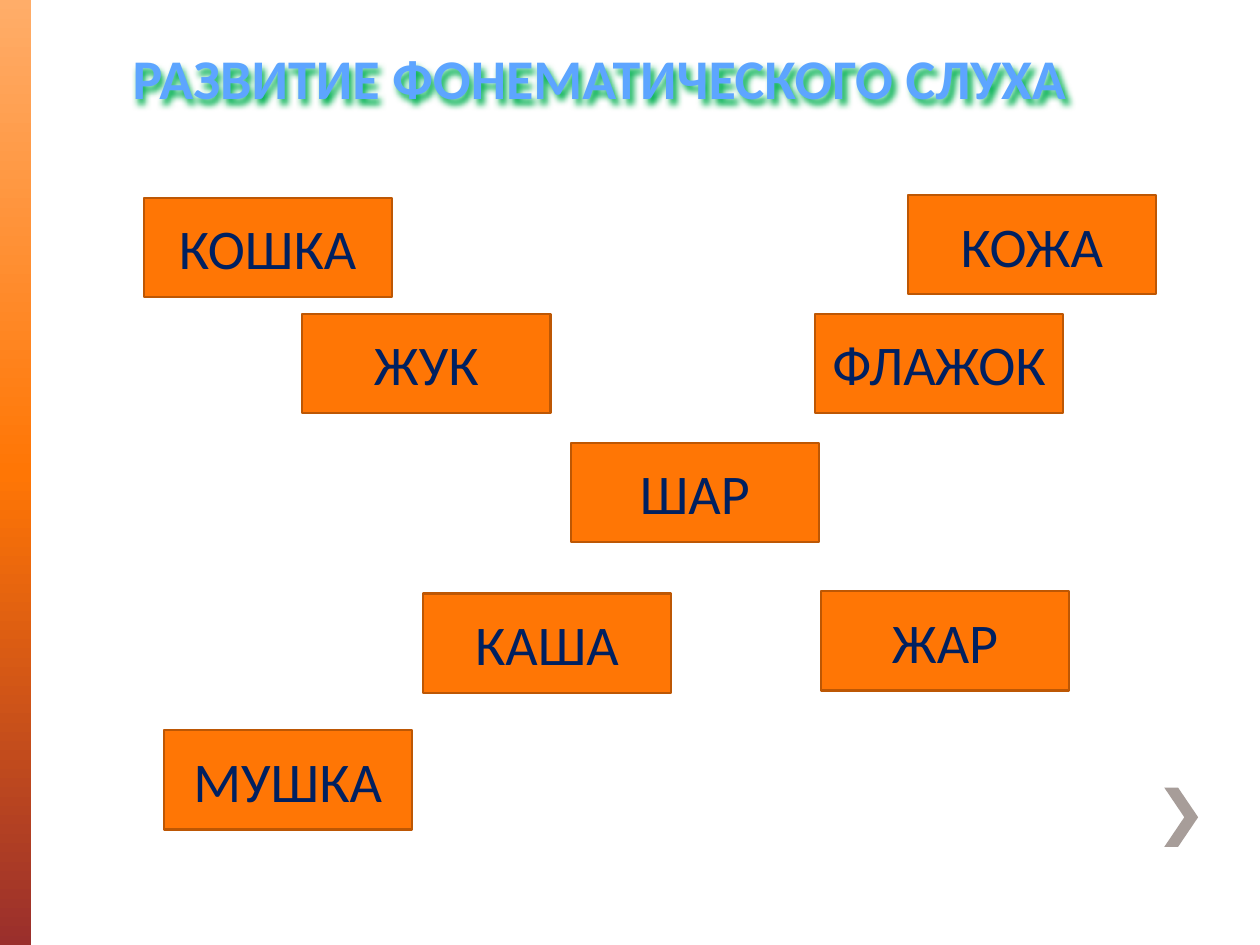
from copy import deepcopy

from lxml import etree
from pptx import Presentation
from pptx.dml.color import RGBColor
from pptx.enum.shapes import MSO_SHAPE
from pptx.enum.text import MSO_ANCHOR, PP_ALIGN
from pptx.oxml.ns import qn
from pptx.util import Pt

ORANGE = RGBColor(0xFF, 0x76, 0x05)
LIGHT_ORANGE = RGBColor(0xFF, 0xAD, 0x69)
DARK_RED = RGBColor(0x9A, 0x2F, 0x2C)
BROWN = RGBColor(0xBD, 0x57, 0x04)
NAVY = RGBColor(0x00, 0x20, 0x60)
BLUE = RGBColor(0x5D, 0xA5, 0xFF)
GREEN = RGBColor(0x00, 0xB0, 0x50)
GREY = RGBColor(0xA7, 0x9D, 0x99)
CARD_W, CARD_H = 141.75, 56.7


def write_centred(tf, text, color, bold=False):
    tf.vertical_anchor = MSO_ANCHOR.MIDDLE
    p = tf.paragraphs[0]
    p.alignment = PP_ALIGN.CENTER
    r = p.add_run()
    r.text = text
    r.font.name = "Calibri"
    r.font.size = Pt(32)
    r.font.bold = bold
    r.font.color.rgb = color


prs = Presentation()
prs.slide_width, prs.slide_height = Pt(720), Pt(540)
s = prs.slides.add_slide(prs.slide_layouts[5])

# Gradient bar on the left edge
bar = s.shapes.add_shape(MSO_SHAPE.RECTANGLE, 0, 0, Pt(18), Pt(540))
bar.shadow.inherit = False
bar.line.fill.background()
bar.fill.gradient()
bar.fill.gradient_angle = 270
first = bar._element.spPr.find(".//" + qn("a:gs"))
first.addnext(deepcopy(first))
stops = [(0, LIGHT_ORANGE), (0.5, ORANGE), (1, DARK_RED)]
for stop, (position, color) in zip(bar.fill.gradient_stops, stops):
    stop.position = position
    stop.color.rgb = color

# Chevron in the lower right corner
outline = s.shapes.build_freeform(Pt(673.2), Pt(450))
outline.add_line_segments([(Pt(x), Pt(y)) for x, y in [
    (665.3, 450), (676.8, 467), (665.3, 484), (673.2, 484), (684.7, 467)]])
chevron = outline.convert_to_shape()
chevron.shadow.inherit = False
chevron.fill.solid()
chevron.fill.fore_color.rgb = GREY
chevron.line.fill.background()

# Word cards
cards = [
    ("МУШКА", 93.6, 417.4),
    ("КОШКА", 82.1, 113),
    ("КАША", 241.7, 339.2),
    ("ЖАР", 469.2, 337.9),
    ("ШАР", 326.2, 253),
    ("КОЖА", 518.7, 111.5),
    ("ЖУК", 172.8, 179.4),
    ("ФЛАЖОК", 465.8, 179.4),
]
for word, x, y in cards:
    sp = s.shapes.add_shape(MSO_SHAPE.RECTANGLE,
                            Pt(x), Pt(y), Pt(CARD_W), Pt(CARD_H))
    sp.shadow.inherit = False
    sp.fill.solid()
    sp.fill.fore_color.rgb = ORANGE
    sp.line.color.rgb = BROWN
    sp.line.width = Pt(1.25)
    write_centred(sp.text_frame, word, NAVY)

# Title with a green shadow
title = s.shapes.title
title.left, title.top, title.width, title.height = Pt(66.2), Pt(20.9), Pt(553), Pt(46)
title.text_frame.word_wrap = False
write_centred(title.text_frame, "РАЗВИТИЕ ФОНЕМАТИЧЕСКОГО СЛУХА", BLUE, bold=True)
title.fill.background()
effects = etree.SubElement(title._element.spPr, qn("a:effectLst"))
shadow = etree.SubElement(effects, qn("a:outerShdw"), blurRad=str(Pt(4)),
                          dist=str(Pt(3)), dir="3600000", algn="tl", rotWithShape="0")
etree.SubElement(shadow, qn("a:srgbClr"), val=str(GREEN))

# The title lies in front of everything else
s.shapes._spTree.append(title._element)

prs.save("out.pptx")
